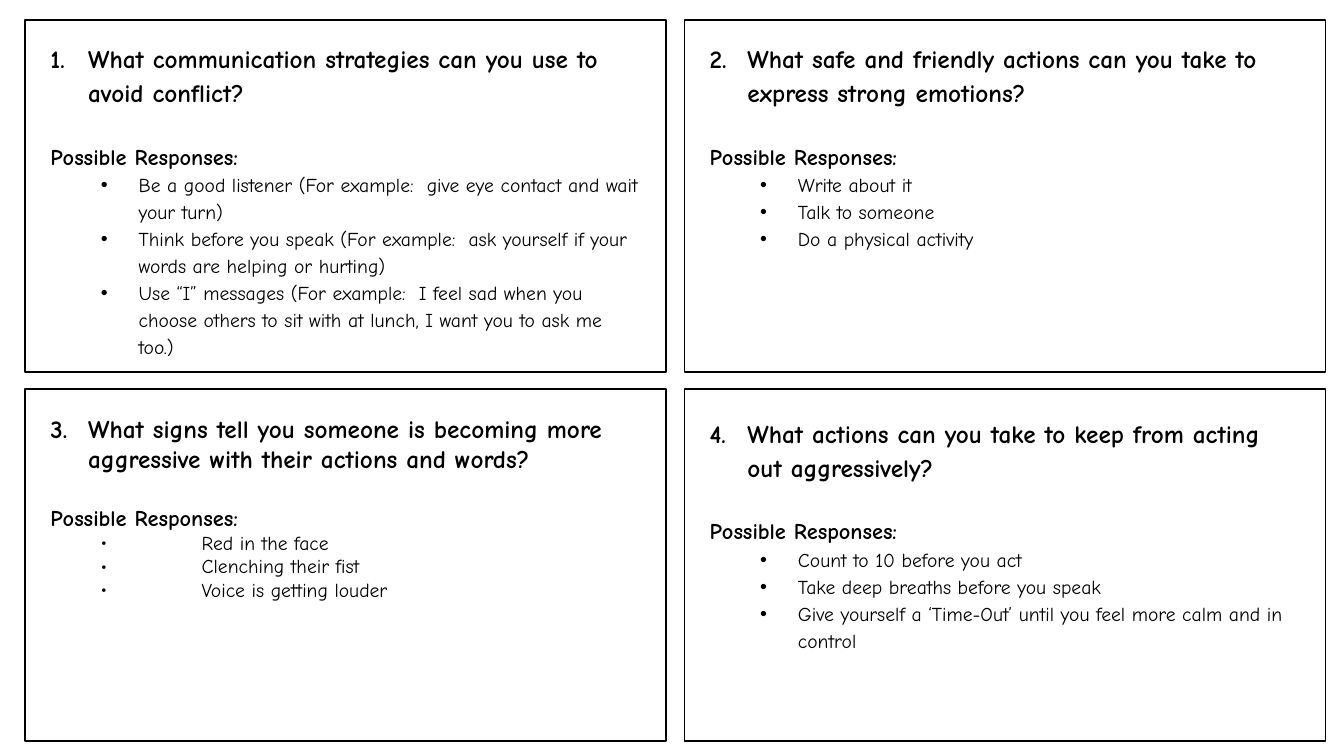
from pptx import Presentation
from pptx import util as u
from pptx.dml import color
from pptx.enum import shapes, text
from pptx.oxml.ns import qn
from lxml import etree

Pt = u.Pt
COLORS = {"ink": "000000", "card": "FFFFFF"}
FONT = "Comic Neue"

# Card grid and the inset of the text in a card
LEFT, TOP = 18, 14.4
CARD_W, CARD_H = 457.9, 251.3
STEP_X, STEP_Y = 470.9, 263.5
INSET_X, TEXT_W = 10.8, 437

NORMAL = dict(spacing=1.15, gap=22, margin=63, indent=-27, bullet_font="Arial")
TIGHT = dict(spacing=1.0, gap=21.4, margin=108, indent=-72, bullet_font=FONT)

CARDS = [
    dict(question="What communication strategies can you use to avoid conflict?",
         responses=["Be a good listener (For example:  give eye contact and wait your turn)",
                    "Think before you speak (For example:  ask yourself if your words are "
                    "helping or hurting)",
                    "Use “I” messages (For example:  I feel sad when you choose others to "
                    "sit with at lunch, I want you to ask me too.)"],
         inset_y=9.4, height=238.3, style=NORMAL),
    dict(question="What safe and friendly actions can you take to express strong emotions?",
         responses=["Write about it", "Talk to someone", "Do a physical activity"],
         inset_y=9.4, height=160.6, style=NORMAL),
    dict(question="What signs tell you someone is becoming more aggressive with their "
                  "actions and words?",
         responses=["Red in the face", "Clenching their fist", "Voice is getting louder"],
         inset_y=13.7, height=164.9, style=TIGHT),
    dict(question="What actions can you take to keep from acting out aggressively?",
         responses=["Count to 10 before you act", "Take deep breaths before you speak",
                    "Give yourself a ‘Time-Out’ until you feel more calm and in control"],
         inset_y=13.7, height=180, style=NORMAL),
]


def rgb(name):
    return color.RGBColor.from_string(COLORS[name])


def write(paragraph, wording, size, bold=True, spacing=1.0, before=0, level=0,
          margin=0, indent=0, bullet=None, number=None, bullet_font="Arial"):
    """Fill one paragraph and set its format, bullet or number."""
    paragraph.level = level
    paragraph.alignment = text.PP_ALIGN.LEFT
    paragraph.line_spacing = spacing
    paragraph.space_before, paragraph.space_after = Pt(before), Pt(0)
    run = paragraph.add_run()
    run.text = wording
    run.font.name, run.font.size, run.font.bold = FONT, Pt(size), bold
    run.font.color.rgb = rgb("ink")

    props = paragraph._p.get_or_add_pPr()
    props.set("marL", str(Pt(margin)))
    props.set("indent", str(Pt(indent)))
    if number:
        etree.SubElement(props, qn("a:buFont"), typeface="+mj-lt")
        etree.SubElement(props, qn("a:buAutoNum"), type="arabicPeriod", startAt=str(number))
    elif bullet:
        etree.SubElement(props, qn("a:buFont"), typeface=bullet_font)
        etree.SubElement(props, qn("a:buChar"), char=bullet)
    else:
        etree.SubElement(props, qn("a:buNone"))


def add_card(slide, body, left, top, number, question, responses, inset_y, height, style):
    """Draw one bordered card with its question and possible responses."""
    # Border
    card = slide.shapes.add_shape(shapes.MSO_SHAPE.RECTANGLE,
                                  Pt(left), Pt(top), Pt(CARD_W), Pt(CARD_H))
    card.shadow.inherit = False
    card.fill.solid()
    card.fill.fore_color.rgb = rgb("card")
    card.line.color.rgb = rgb("ink")
    card.line.width = Pt(1)

    # Body placeholder, brought in front of the card
    body.element.getparent().append(body.element)
    body.left, body.top = Pt(left + INSET_X), Pt(top + inset_y)
    body.width, body.height = Pt(TEXT_W), Pt(height)
    frame = body.text_frame
    frame.word_wrap = True
    frame.auto_size = text.MSO_AUTO_SIZE.SHAPE_TO_FIT_TEXT
    frame.vertical_anchor = text.MSO_ANCHOR.TOP

    # Question, label and responses
    spacing = style["spacing"]
    write(frame.paragraphs[0], question, 18, spacing=spacing,
          margin=27, indent=-27, number=number)
    write(frame.add_paragraph(), "Possible Responses:", 16,
          spacing=spacing, before=style["gap"])
    for response in responses:
        write(frame.add_paragraph(), response, 14, bold=False, spacing=spacing, level=1,
              margin=style["margin"], indent=style["indent"],
              bullet="•", bullet_font=style["bullet_font"])


def main():
    deck = Presentation()
    deck.slide_width, deck.slide_height = Pt(960), Pt(540)
    # The comparison layout offers four body placeholders
    slide = deck.slides.add_slide(deck.slide_layouts[4])
    title = slide.shapes.title.element
    title.getparent().remove(title)
    bodies = list(slide.placeholders)

    for index, (body, content) in enumerate(zip(bodies, CARDS)):
        row, column = divmod(index, 2)
        add_card(slide, body, LEFT + column * STEP_X, TOP + row * STEP_Y,
                 index + 1, **content)
    deck.save("out.pptx")


if __name__ == "__main__":
    main()
